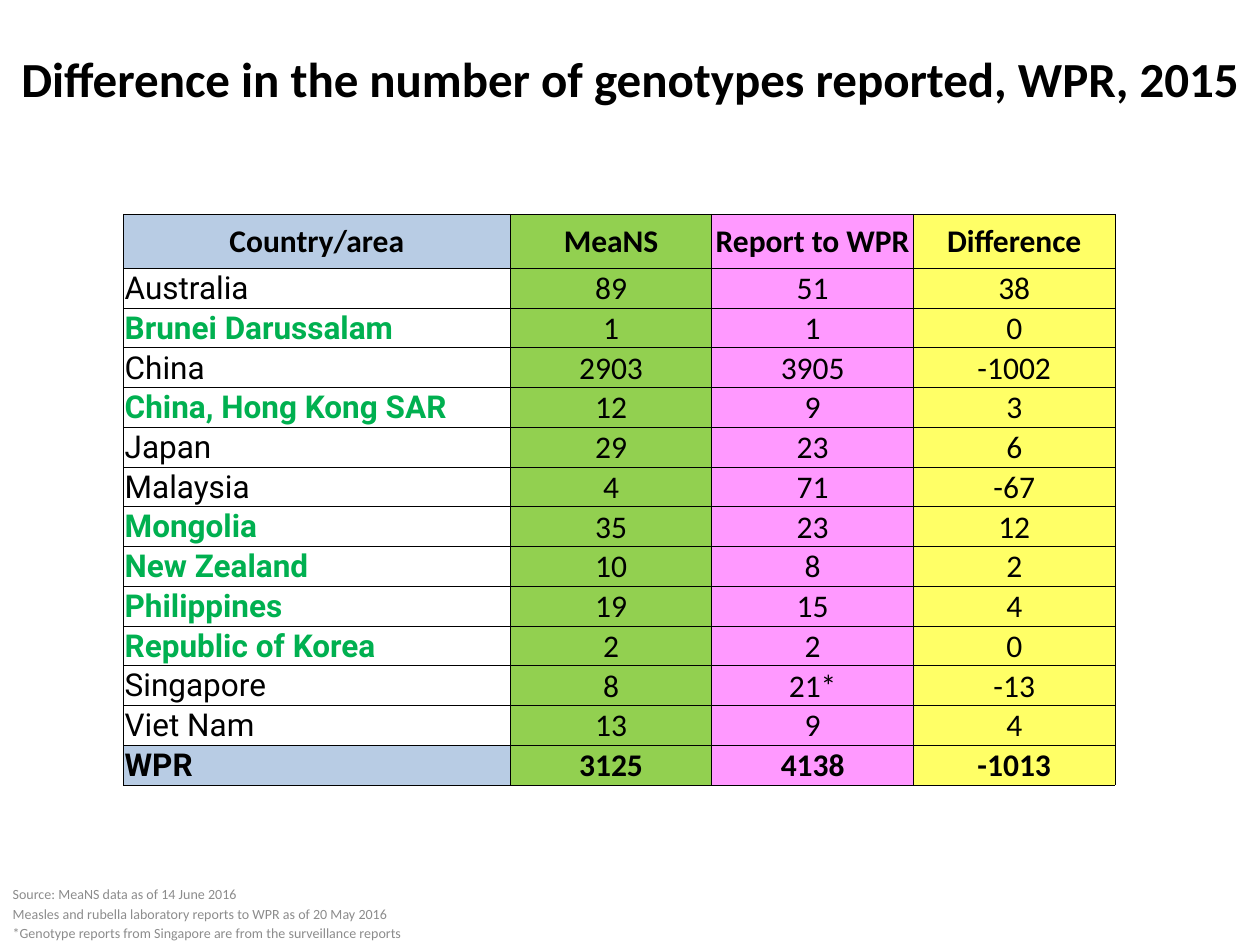
from lxml import etree
from pptx import Presentation
from pptx import util as u
from pptx.dml.color import RGBColor
from pptx.enum import text
from pptx.oxml import ns

TITLE = "Difference in the number of genotypes reported, WPR, 2015"
NOTES = [
    "Source: MeaNS data as of 14 June 2016",
    "Measles and rubella laboratory reports to WPR as of 20 May 2016",
    "*Genotype reports from Singapore are from the surveillance reports",
]
ROWS = [
    ("Country/area", "MeaNS", "Report to WPR", "Difference"),
    ("Australia", "89", "51", "38"),
    ("Brunei Darussalam", "1", "1", "0"),
    ("China", "2903", "3905", "-1002"),
    ("China, Hong Kong SAR", "12", "9", "3"),
    ("Japan", "29", "23", "6"),
    ("Malaysia", "4", "71", "-67"),
    ("Mongolia", "35", "23", "12"),
    ("New Zealand", "10", "8", "2"),
    ("Philippines", "19", "15", "4"),
    ("Republic of Korea", "2", "2", "0"),
    ("Singapore", "8", "21*", "-13"),
    ("Viet Nam", "13", "9", "4"),
    ("WPR", "3125", "4138", "-1013"),
]
HIGHLIGHTED = {"Brunei Darussalam", "China, Hong Kong SAR", "Mongolia",
               "New Zealand", "Philippines", "Republic of Korea"}
COLUMN_FILLS = ["B8CCE4", "92D050", "FF99FF", "FFFF66"]
COLUMN_WIDTHS = [3.07, 1.6, 1.6, 1.6]
HEADER_HEIGHT, ROW_HEIGHT = 0.43, 0.31
BLACK, WHITE, GREEN, GREY = "000000", "FFFFFF", "00B050", "8C8C8C"


def color(value):
    """Turn a hex string into a colour."""
    return RGBColor.from_string(value)


def add_run(paragraph, content, size, fill=BLACK, bold=False, font="Calibri"):
    """Add one formatted run to a paragraph."""
    run = paragraph.add_run()
    run.text = content
    run.font.name, run.font.size, run.font.bold = font, u.Pt(size), bold
    run.font.color.rgb = color(fill)


def fill_placeholder(shape, box, lines, size, align, anchor, **style):
    """Place a placeholder and write one paragraph per line."""
    shape.left, shape.top, shape.width, shape.height = map(u.Inches, box)
    frame = shape.text_frame
    frame.auto_size = text.MSO_AUTO_SIZE.NONE
    frame.vertical_anchor = anchor
    for index, line in enumerate(lines):
        paragraph = frame.add_paragraph() if index else frame.paragraphs[0]
        paragraph.alignment = align
        paragraph.space_before = u.Pt(0.2 * size if index else 0)
        add_run(paragraph, line, size, **style)


def add_borders(cell):
    """Draw thin black lines on all sides of a cell."""
    properties = cell._tc.get_or_add_tcPr()
    for index, side in enumerate(("lnL", "lnR", "lnT", "lnB")):
        line = etree.Element(ns.qn(f"a:{side}"), w=str(u.Pt(0.5)))
        solid = etree.SubElement(line, ns.qn("a:solidFill"))
        etree.SubElement(solid, ns.qn("a:srgbClr"), val=BLACK)
        properties.insert(index, line)


def format_cell(cell, content, row, column):
    """Write and style a cell by its place in the table."""
    header, total = row == 0, row == len(ROWS) - 1
    country = column == 0 and not header
    highlighted = content in HIGHLIGHTED
    cell.margin_left = cell.margin_right = cell.margin_top = u.Inches(0.01)
    cell.margin_bottom = 0
    middle = header or country
    cell.vertical_anchor = text.MSO_ANCHOR.MIDDLE if middle else text.MSO_ANCHOR.BOTTOM
    cell.fill.solid()
    plain = country and not total
    cell.fill.fore_color.rgb = color(WHITE if plain else COLUMN_FILLS[column])
    add_borders(cell)
    paragraph = cell.text_frame.paragraphs[0]
    paragraph.alignment = text.PP_ALIGN.LEFT if country else text.PP_ALIGN.CENTER
    add_run(paragraph, content, 18, GREEN if highlighted else BLACK,
            header or total or highlighted, "Roboto" if country else "Calibri")


def add_genotype_table(slide, left, top):
    """Add the table of genotype counts."""
    heights = [HEADER_HEIGHT] + [ROW_HEIGHT] * (len(ROWS) - 1)
    table = slide.shapes.add_table(
        len(ROWS), len(COLUMN_WIDTHS), u.Inches(left), u.Inches(top),
        u.Inches(sum(COLUMN_WIDTHS)), u.Inches(sum(heights))).table
    table.horz_banding = False
    for column, width in zip(table.columns, COLUMN_WIDTHS):
        column.width = u.Inches(width)
    for row, (values, height) in enumerate(zip(ROWS, heights)):
        table.rows[row].height = u.Inches(height)
        for column, content in enumerate(values):
            format_cell(table.cell(row, column), content, row, column)


def main():
    """Build and save the slide."""
    presentation = Presentation()
    presentation.slide_width, presentation.slide_height = u.Inches(10), u.Inches(7.5)
    slide = presentation.slides.add_slide(presentation.slide_layouts[0])
    fill_placeholder(slide.shapes.title, (0, 0, 10, 1.23), [TITLE], 28,
                     text.PP_ALIGN.CENTER, text.MSO_ANCHOR.MIDDLE, bold=True)
    fill_placeholder(slide.placeholders[1], (0, 6.98, 5.16, 0.52), NOTES, 8,
                     text.PP_ALIGN.LEFT, text.MSO_ANCHOR.TOP, fill=GREY)
    add_genotype_table(slide, 0.98, 1.7)
    presentation.save("out.pptx")


if __name__ == "__main__":
    main()
